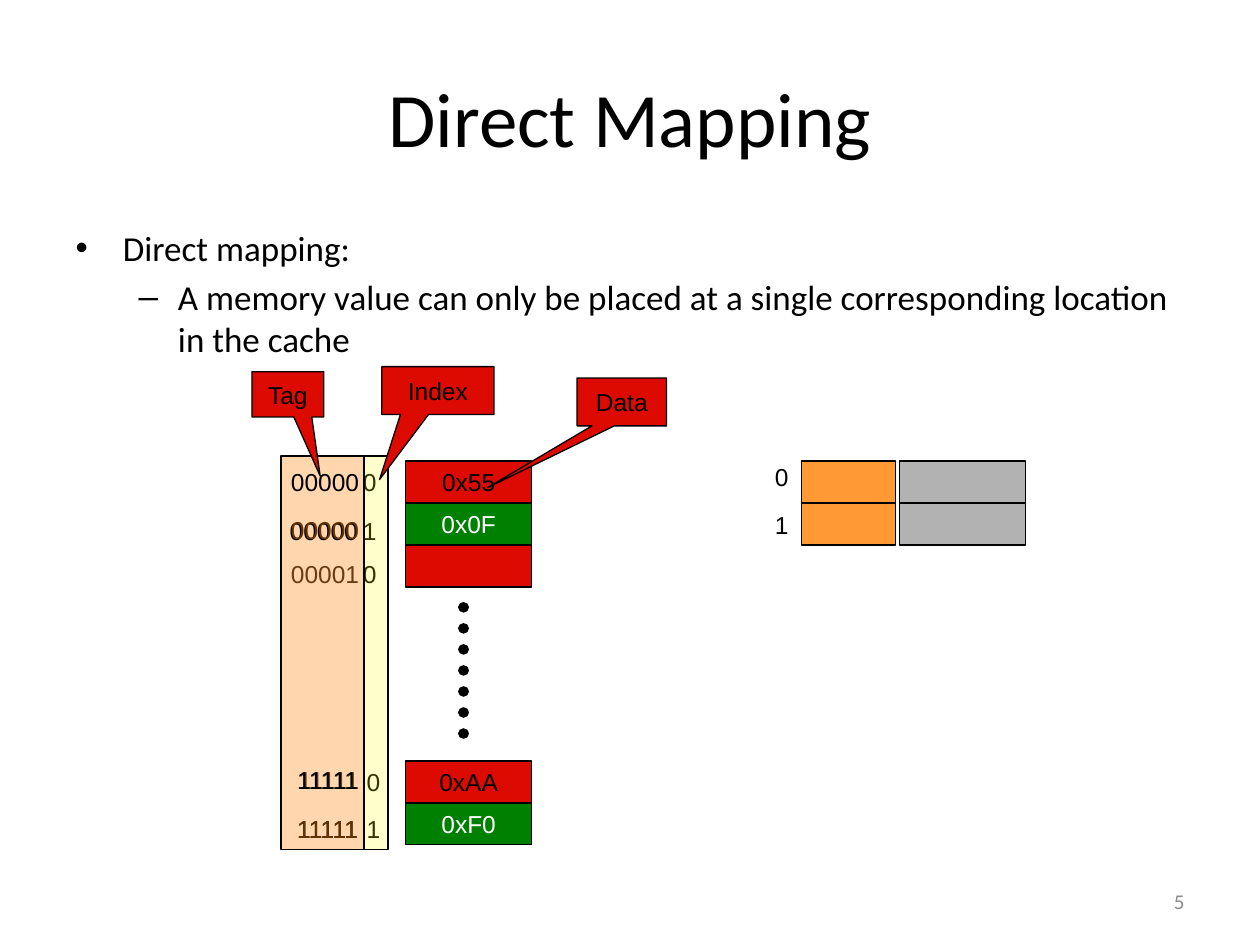
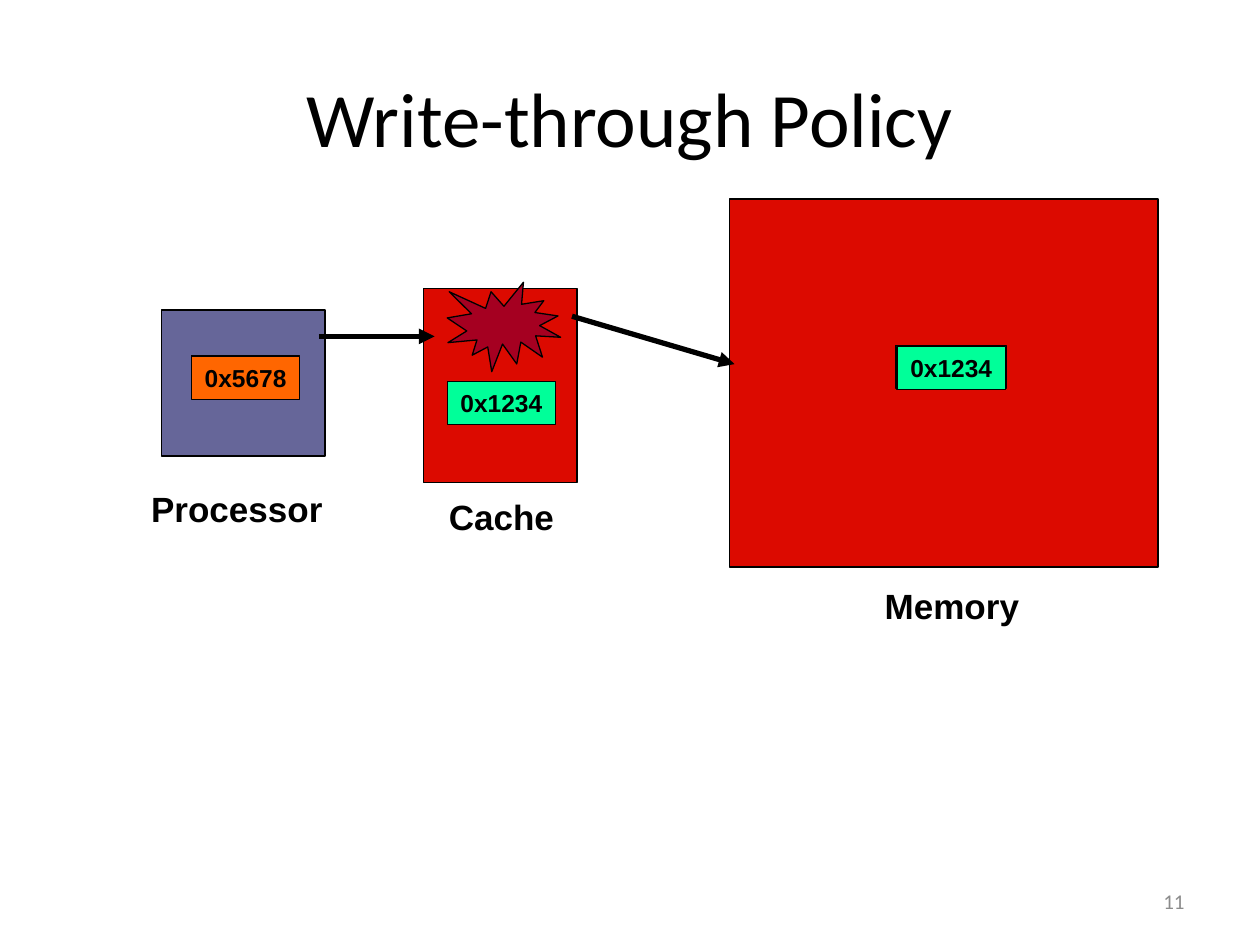
from lxml import etree
from pptx import Presentation, util as u
from pptx.dml.color import RGBColor
from pptx.enum import dml, shapes, text
from pptx.oxml import ns

COLS, ROWS = 100, 75
INK = {"black": "000000", "white": "FFFFFF", "red": "DC0A00", "green": "008000",
       "gray": "B2B2B2", "orange": "FF9933", "yellow": "FFFF00", "brown": "663300",
       "mint": "00FF99", "flame": "FF6600", "slate": "666699", "wine": "A50021",
       "note": "8C8C8C"}
KIND = shapes.MSO_SHAPE
ALIGN = text.PP_ALIGN
MID, TOP = text.MSO_ANCHOR.MIDDLE, text.MSO_ANCHOR.TOP
LABEL = {"name": "Arial", "size": u.Pt(14)}
BOLD = {**LABEL, "bold": True}
HEAD = {**BOLD, "size": u.Pt(20)}
TITLE = {"name": "Calibri", "size": u.Pt(44)}
BODY = {**TITLE, "size": u.Pt(20)}
NOTE = {**TITLE, "size": u.Pt(12)}


def rgb(name):
    return RGBColor.from_string(INK[name])


class Deck:
    """Style and current slide; lengths are grid columns and rows."""

    def __init__(self):
        self.prs = Presentation()
        self.prs.slide_width, self.prs.slide_height = u.Inches(10), u.Inches(7.5)
        self.slide = None

    def place(self, x, y, w, h):
        col, row = self.prs.slide_width / COLS, self.prs.slide_height / ROWS
        return [round(n) for n in (x * col, y * row, w * col, h * row)]

    def move(self, item, *box):
        names = ("left", "top", "width", "height")
        for name, val in zip(names, self.place(*box)):
            setattr(item, name, val)

    def style(self, par, form, ink="black", align=None):
        if align is not None:
            par.alignment = align
        for name, val in form.items():
            setattr(par.font, name, val)
        par.font.color.rgb = rgb(ink)

    def fill_in(self, item, words, form, ink="black", align=ALIGN.CENTER,
                anchor=TOP, wrap=False, grow=False):
        frame = item.text_frame
        fit = text.MSO_AUTO_SIZE
        frame.auto_size = fit.SHAPE_TO_FIT_TEXT if grow else fit.NONE
        frame.word_wrap, frame.vertical_anchor = wrap, anchor
        frame.text = words
        self.style(frame.paragraphs[0], form, ink, align)

    def page(self, title, num, layout):
        self.slide = self.prs.slides.add_slide(self.prs.slide_layouts[layout])
        head = self.slide.shapes.title
        self.move(head, 5, 3, 90, 12.5)
        self.fill_in(head, title, TITLE, anchor=MID, wrap=True)
        self.label(num, 71.7, 69.5, 23.3, 4, NOTE, ink="note",
                   align=ALIGN.RIGHT, anchor=MID, wrap=True, grow=False)

    def bullets(self, items):
        body = self.slide.placeholders[1]
        self.move(body, 5, 17.5, 90, 49.5)
        frame = body.text_frame
        frame.text = "\n".join(words for _, words in items)
        for par, (level, _) in zip(frame.paragraphs, items):
            par.level = level
            self.style(par, BODY)
        frame.paragraphs[0].space_before = u.Pt(0)

    def label(self, words, x, y, w, h, form=LABEL, grow=True, **opts):
        item = self.slide.shapes.add_textbox(*self.place(x, y, w, h))
        self.fill_in(item, words, form, grow=grow, **opts)

    def shape(self, fill, x, y, w, h, words="", kind=KIND.RECTANGLE,
              form=LABEL, alpha=None, adjust=(), **opts):
        item = self.slide.shapes.add_shape(kind, *self.place(x, y, w, h))
        item.shadow.inherit = False
        item.fill.solid()
        item.fill.fore_color.rgb = rgb(fill)
        item.line.color.rgb, item.line.width = rgb("black"), u.Pt(0.75)
        for i, val in enumerate(adjust):
            item.adjustments[i] = val
        if alpha:
            tone = item._element.spPr.find(
                ns.qn("a:solidFill") + "/" + ns.qn("a:srgbClr"))
            etree.SubElement(tone, ns.qn("a:alpha"), val=str(alpha * 1000))
        if words:
            self.fill_in(item, words, form, **opts)

    def line(self, x, y, to_x, to_y, width, dots=False):
        start, end = self.place(x, y, 0, 0)[:2], self.place(to_x, to_y, 0, 0)[:2]
        item = self.slide.shapes.add_connector(
            shapes.MSO_CONNECTOR.STRAIGHT, *start, *end)
        item.line.color.rgb, item.line.width = rgb("black"), u.Pt(width)
        edge = item._element.spPr.find(ns.qn("a:ln"))
        if dots:
            item.line.dash_style = dml.MSO_LINE.ROUND_DOT
            edge.set("cap", "rnd")
        else:
            etree.SubElement(edge, ns.qn("a:tailEnd"), type="triangle")
        etree.SubElement(item._element.spPr, ns.qn("a:effectLst"))


def mapping(deck):
    deck.page("Direct Mapping", "5", 1)
    deck.bullets([(0, "Direct mapping:"),
                  (1, "A memory value can only be placed at a single "
                      "corresponding location in the cache")])
    cell = 3.33

    # Addresses beneath the tinted bands
    deck.label("11111", 22.6, 60.2, 7, 3.4)
    deck.label("00001", 22.1, 43.9, 7.4, cell)
    for bit, x, y in (("0", 27.8, 36.6), ("1", 27.8, 40.5), ("0", 27.8, 43.9),
                      ("0", 28.1, 60.4), ("1", 28.1, 64.1)):
        deck.label(bit, x, y, 3.1, cell)

    # Cache: tag and data columns
    for row in range(2):
        y = 36.6 + row * cell
        deck.shape("orange", 63.6, y, 7.5, cell)
        deck.shape("gray", 71.4, y, 10, cell)
        deck.label(str(row), 60.5, 36.2 + row * 3.8, 3.1, cell)

    # Index and tag bands
    deck.shape("yellow", 28.9, 36.2, 1.9, 31.2, alpha=20)
    deck.shape("orange", 22.3, 36.2, 6.6, 31.2, alpha=40)

    # Memory values
    for top, vals in ((36.6, ("0x55", "0x0F", "")), (60.4, ("0xAA", "0xF0"))):
        for row, val in enumerate(vals):
            fill, ink = (("red", "black"), ("green", "white"))[row % 2]
            deck.shape(fill, 32.2, top + row * cell, 10, cell, val,
                       ink=ink, anchor=MID)
    deck.line(36.8, 48.2, 36.8, 58.4, 6, dots=True)

    # Tags above the bands
    for tag, x, y, ink in (("00000", 22.1, 36.6, "black"),
                           ("00000", 22, 40.5, "black"),
                           ("00000", 22.1, 40.4, "brown"),
                           ("11111", 22.5, 60.2, "black"),
                           ("11111", 22.5, 64.1, "black"),
                           ("11111", 22.5, 64.1, "brown")):
        deck.label(tag, x, y, 7.4 if tag == "00000" else 7, cell, ink=ink)

    # Callouts
    for words, box, tip in (("Tag", (20, 29.5, 5.7, 3.6), (0.45, 1.8)),
                            ("Index", (30.3, 29.1, 8.9, 3.8), (-0.52, 1.86)),
                            ("Data", (45.8, 30, 7.1, 3.8), (-1.5, 1.79))):
        deck.shape("red", *box, words, kind=KIND.RECTANGULAR_CALLOUT,
                   adjust=tip, anchor=MID, wrap=True)


def policy(deck):
    deck.page("Write-through Policy", "11", 5)

    def value(fill, words, x, y):
        deck.shape(fill, x, y, 8.6, 3.4, words, form=BOLD, grow=True)

    # Memory, processor and cache blocks
    deck.shape("red", 57.9, 15.8, 34, 29.2)
    deck.shape("slate", 12.8, 24.6, 13, 11.6)
    deck.shape("red", 33.6, 22.9, 12.2, 15.4)

    # Arrows from processor to cache to memory
    deck.line(25.3, 26.7, 34.5, 26.7, 3)
    deck.line(45.4, 25.1, 58.3, 28.9, 3)
    deck.shape("wine", 35.5, 22.4, 9, 7.1, kind=KIND.EXPLOSION1)

    # Stored values
    for x, y in ((71.1, 27.4), (71.3, 27.4), (71.2, 27.5), (35.5, 30.3)):
        value("mint", "0x1234", x, y)
    for y in (28.2, 28.3):
        value("flame", "0x5678", 15.2, y)

    # Block names
    for words, x, y, w in (("Processor", 11, 38.2, 15.6),
                           ("Cache", 34.6, 38.8, 10.4),
                           ("Memory", 69.2, 45.9, 12.7)):
        deck.label(words, x, y, w, 4.3, HEAD)


def main():
    deck = Deck()
    mapping(deck)
    policy(deck)
    deck.prs.save("out.pptx")


if __name__ == "__main__":
    main()
